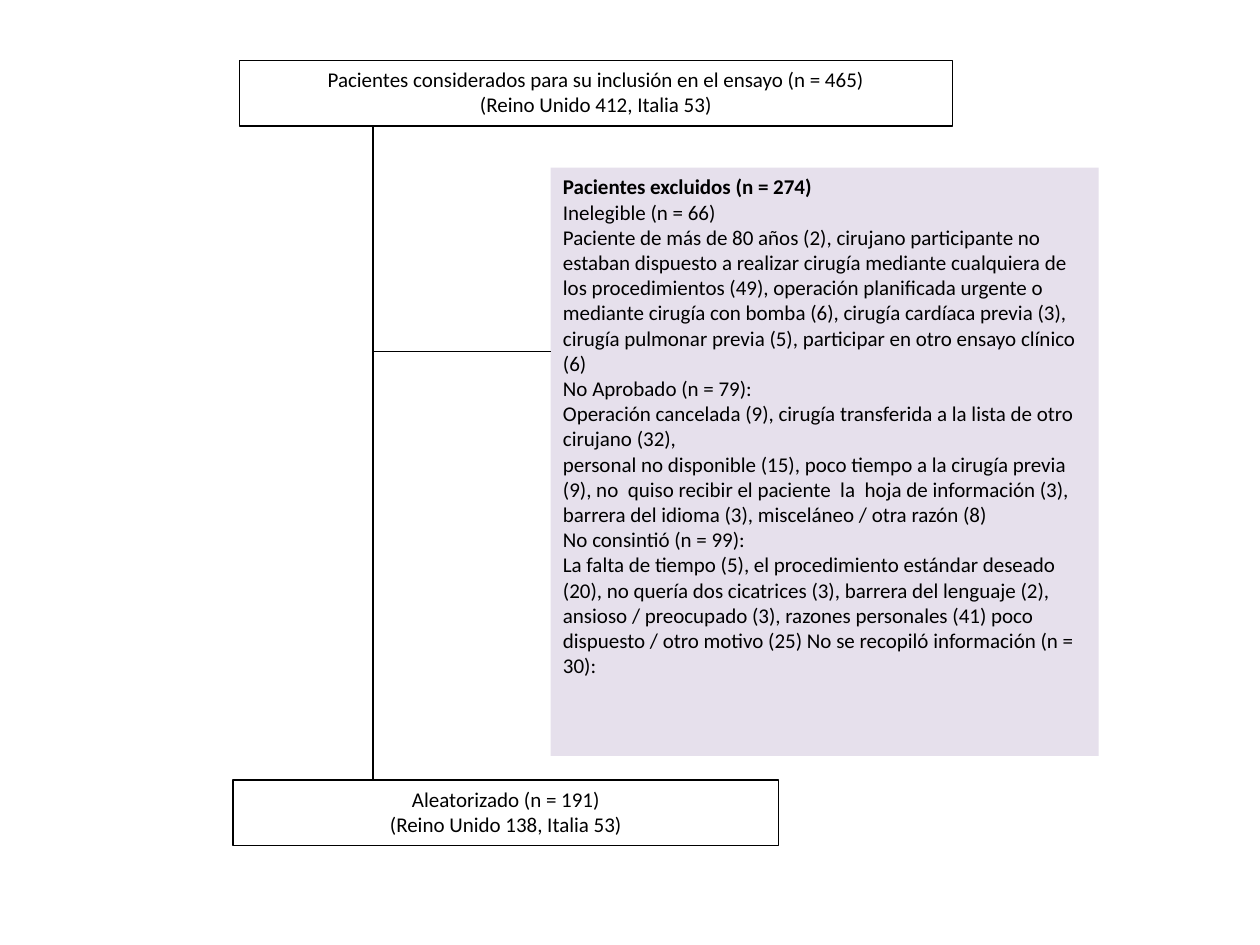
from pptx import Presentation
from pptx.dml.color import RGBColor as Rgb
from pptx.enum.shapes import MSO_CONNECTOR as Conn, MSO_SHAPE as Shape
from pptx.enum.text import MSO_ANCHOR as Anchor, PP_ALIGN as Align
from pptx.oxml.ns import qn
from pptx.util import Pt
from lxml.etree import SubElement as Sub

THEME = {
    "font": "Calibri",
    "size": 12,
    "rule": 0.75,
    "ink": Rgb(0, 0, 0),
    "white": Rgb(255, 255, 255),
    "lilac": Rgb(0xE6, 0xE0, 0xEC),
}

CONSIDERED = [
    "Pacientes considerados para su inclusión en el ensayo (n = 465)",
    "(Reino Unido 412, Italia 53)",
]
EXCLUDED = [
    "Pacientes excluidos (n = 274)",
    "Inelegible (n = 66)",
    "Paciente de más de 80 años (2), cirujano participante no estaban dispuesto "
    "a realizar cirugía mediante cualquiera de los procedimientos (49), operación "
    "planificada urgente o mediante cirugía con bomba (6), cirugía cardíaca previa "
    "(3), cirugía pulmonar previa (5), participar en otro ensayo clínico (6)",
    "No Aprobado (n = 79):",
    "Operación cancelada (9), cirugía transferida a la lista de otro cirujano (32),",
    "personal no disponible (15), poco tiempo a la cirugía previa (9), no  quiso "
    "recibir el paciente  la  hoja de información (3), barrera del idioma (3), "
    "misceláneo / otra razón (8)",
    "No consintió (n = 99):",
    "La falta de tiempo (5), el procedimiento estándar deseado (20), no quería dos "
    "cicatrices (3), barrera del lenguaje (2), ansioso / preocupado (3), razones "
    "personales (41) poco dispuesto / otro motivo (25) No se recopiló información "
    "(n = 30):",
]
RANDOM = ["Aleatorizado (n = 191)", "(Reino Unido 138, Italia 53)"]

HIGH = 37.4
TOP = (136.8, 34.6, 407.5, HIGH)
SIDE = (314.6, 95.8, 313.2, 336.2)
END = (133.2, 445.7, 311.8, HIGH)
STEM = 213.1
BRANCH = 200.9


def add_box(slide, area, lines, fill, align, framed=True, lead=False):
    box = slide.shapes.add_shape(Shape.RECTANGLE, *map(Pt, area))
    box.shadow.inherit = False
    box.fill.solid()
    box.fill.fore_color.rgb = fill
    if framed:
        box.line.color.rgb = THEME["ink"]
        box.line.width = Pt(THEME["rule"])
    else:
        box.line.fill.background()
    frame = box.text_frame
    frame.word_wrap = True
    frame.vertical_anchor = Anchor.TOP
    for i, text in enumerate(lines):
        para = frame.add_paragraph() if i else frame.paragraphs[0]
        para.alignment = align
        run = para.add_run()
        run.text = text
        font = run.font
        font.name = THEME["font"]
        font.size = Pt(THEME["size"])
        font.color.rgb = THEME["ink"]
        font.bold = lead and i == 0


def add_line(slide, *ends):
    line = slide.shapes.add_connector(Conn.STRAIGHT, *map(Pt, ends))
    line.line.color.rgb = THEME["ink"]
    line.line.width = Pt(THEME["rule"])
    Sub(line._element.spPr, qn("a:effectLst"))


def main():
    deck = Presentation()
    deck.slide_width, deck.slide_height = Pt(720), Pt(540)
    slide = deck.slides.add_slide(deck.slide_layouts[6])
    add_box(slide, TOP, CONSIDERED, THEME["white"], Align.CENTER)
    add_box(slide, SIDE, EXCLUDED, THEME["lilac"], Align.LEFT, framed=False, lead=True)
    add_box(slide, END, RANDOM, THEME["white"], Align.CENTER)
    add_line(slide, STEM, TOP[1] + HIGH, STEM, END[1])
    add_line(slide, STEM, BRANCH, SIDE[0], BRANCH)
    deck.save("out.pptx")


if __name__ == "__main__":
    main()
